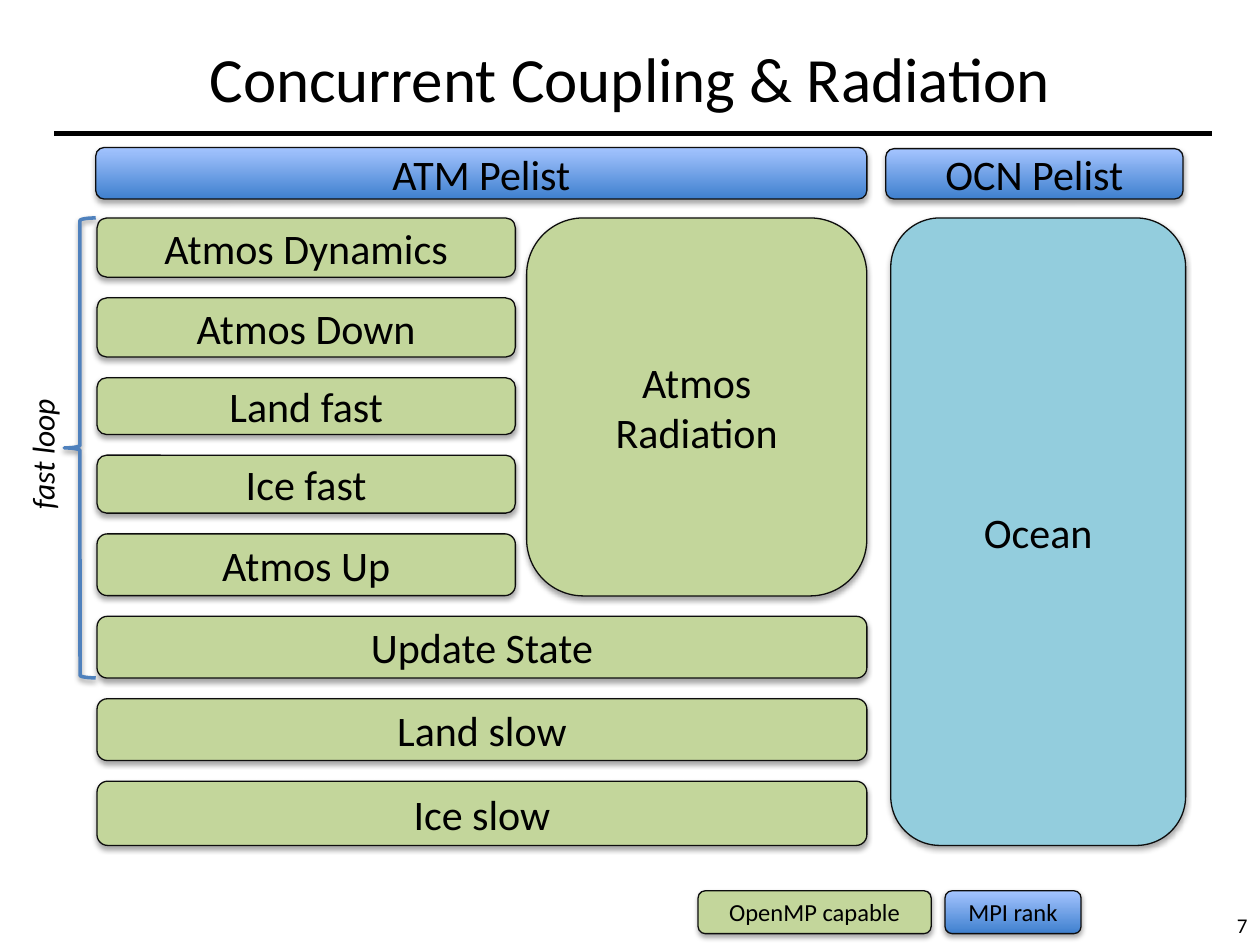
from dataclasses import dataclass

from lxml.etree import SubElement
from pptx import Presentation
from pptx.dml.color import RGBColor
from pptx.enum.shapes import MSO_CONNECTOR, MSO_SHAPE
from pptx.enum.text import MSO_ANCHOR, MSO_AUTO_SIZE, PP_ALIGN
from pptx.oxml.ns import qn
from pptx.util import Inches, Pt


@dataclass(frozen=True)
class Theme:
    """Colours, font and type sizes of the slide."""
    font: str = "Calibri"
    text: str = "000000"
    outline: str = "0D0D0D"
    brace: str = "4F81BD"
    openmp: str = "C3D69B"
    ocean: str = "93CDDD"
    rank: tuple = ("3F80CE", "A4C4FF")
    title_size: int = 36
    block_size: int = 24
    loop_size: int = 18
    legend_size: int = 14
    number_size: int = 12


THEME = Theme()
LEFT, TOP, BOTTOM = 0.77, 1.73, 6.71
FAST_WIDTH, FULL_WIDTH = 3.32, 6.11
STEPS = [
    ("Atmos Dynamics", FAST_WIDTH, 0.47),
    ("Atmos Down", FAST_WIDTH, 0.47),
    ("Land fast", FAST_WIDTH, 0.45),
    ("Ice fast", FAST_WIDTH, 0.46),
    ("Atmos Up", FAST_WIDTH, 0.49),
    ("Update State", FULL_WIDTH, 0.49),
    ("Land slow", FULL_WIDTH, 0.49),
    ("Ice slow", FULL_WIDTH, 0.51),
]


def inches(*lengths):
    """Convert several lengths to slide units."""
    return [Inches(length) for length in lengths]


def write_text(shape, text, size, alignment=PP_ALIGN.CENTER, italic=False):
    """Fill a shape with text in the theme font."""
    shape.text_frame.text = text
    for paragraph in shape.text_frame.paragraphs:
        paragraph.alignment = alignment
        for run in paragraph.runs:
            run.font.name = THEME.font
            run.font.size = Pt(size)
            run.font.italic = italic
            run.font.color.rgb = RGBColor.from_string(THEME.text)


def set_line(line, color, width):
    """Set the colour and width of a line."""
    line.color.rgb = RGBColor.from_string(color)
    line.width = Pt(width)


def add_shadow(shape, distance, opacity):
    """Give a shape a soft shadow straight below it."""
    shape.shadow.inherit = False
    effects = shape._element.spPr.find(qn("a:effectLst"))
    shadow = SubElement(
        effects, qn("a:outerShdw"), blurRad=str(Pt(3.1)),
        dist=str(Pt(distance)), dir="5400000", rotWithShape="0")
    color = SubElement(shadow, qn("a:srgbClr"), val="000000")
    SubElement(color, qn("a:alpha"), val=str(opacity * 1000))


def set_fill(fill, color):
    """Apply a solid colour, or a gradient rising from the first colour."""
    if isinstance(color, str):
        fill.solid()
        fill.fore_color.rgb = RGBColor.from_string(color)
        return
    fill.gradient()
    fill.gradient_angle = 90
    for stop, stop_color in zip(fill.gradient_stops, color):
        stop.color.rgb = RGBColor.from_string(stop_color)


def add_block(slide, text, box, color, size=THEME.block_size):
    """Add a rounded component block."""
    block = slide.shapes.add_shape(
        MSO_SHAPE.FLOWCHART_ALTERNATE_PROCESS, *inches(*box))
    set_fill(block.fill, color)
    set_line(block.line, THEME.outline, 0.75)
    add_shadow(block, 1.8, 35)
    block.text_frame.vertical_anchor = MSO_ANCHOR.MIDDLE
    write_text(block, text, size)


def add_steps(slide):
    """Stack the atmosphere steps with equal gaps."""
    heights = sum(height for _, _, height in STEPS)
    gap = (BOTTOM - TOP - heights) / (len(STEPS) - 1)
    top = TOP
    for text, width, height in STEPS:
        add_block(slide, text, (LEFT, top, width, height), THEME.openmp)
        top += height + gap


def add_title(slide, text):
    """Place the title above its rule."""
    title = slide.shapes.title
    title.left, title.top, title.width, title.height = inches(0.5, 0.26, 9, 0.7)
    title.text_frame.vertical_anchor = MSO_ANCHOR.MIDDLE
    write_text(title, text, THEME.title_size)
    rule = slide.shapes.add_connector(
        MSO_CONNECTOR.STRAIGHT, *inches(0.43, 1.06, 9.62, 1.06))
    set_line(rule.line, THEME.text, 3)
    SubElement(rule._element.spPr, qn("a:effectLst"))


def add_fast_loop(slide):
    """Mark the fast loop with a brace and an upright label."""
    brace = slide.shapes.add_shape(
        MSO_SHAPE.LEFT_BRACE, *inches(0.51, TOP, 0.25, 3.65))
    brace.fill.background()
    set_line(brace.line, THEME.brace, 2)
    add_shadow(brace, 1.6, 38)
    label = slide.shapes.add_textbox(*inches(-0.25, 3.36, 1.17, 0.4))
    label.rotation = 270
    label.text_frame.word_wrap = False
    label.text_frame.auto_size = MSO_AUTO_SIZE.SHAPE_TO_FIT_TEXT
    write_text(label, "fast loop", THEME.loop_size, PP_ALIGN.LEFT, True)


def add_page_number(slide, number):
    """Write the page number in the lower right corner."""
    box = slide.shapes.add_textbox(*inches(7.67, 7.19, 2.33, 0.31))
    box.text_frame.word_wrap = True
    write_text(box, number, THEME.number_size, PP_ALIGN.RIGHT)


def main():
    """Build and save the slide."""
    presentation = Presentation()
    presentation.slide_width, presentation.slide_height = inches(10, 7.5)
    slide = presentation.slides.add_slide(presentation.slide_layouts[5])
    add_title(slide, "Concurrent Coupling & Radiation")
    add_block(slide, "ATM Pelist", (0.76, 1.17, 6.12, 0.41), THEME.rank)
    add_block(slide, "OCN Pelist", (7.03, 1.18, 2.36, 0.4), THEME.rank)
    add_steps(slide)
    add_block(slide, "Atmos\nRadiation", (4.18, TOP, 2.7, 3), THEME.openmp)
    add_block(slide, "Ocean", (7.07, TOP, 2.34, BOTTOM - TOP), THEME.ocean)
    add_fast_loop(slide)
    add_block(slide, "OpenMP capable", (5.54, 7.07, 1.85, 0.34),
              THEME.openmp, THEME.legend_size)
    add_block(slide, "MPI rank", (7.5, 7.07, 1.08, 0.34),
              THEME.rank, THEME.legend_size)
    add_page_number(slide, "7")
    presentation.save("out.pptx")


if __name__ == "__main__":
    main()
